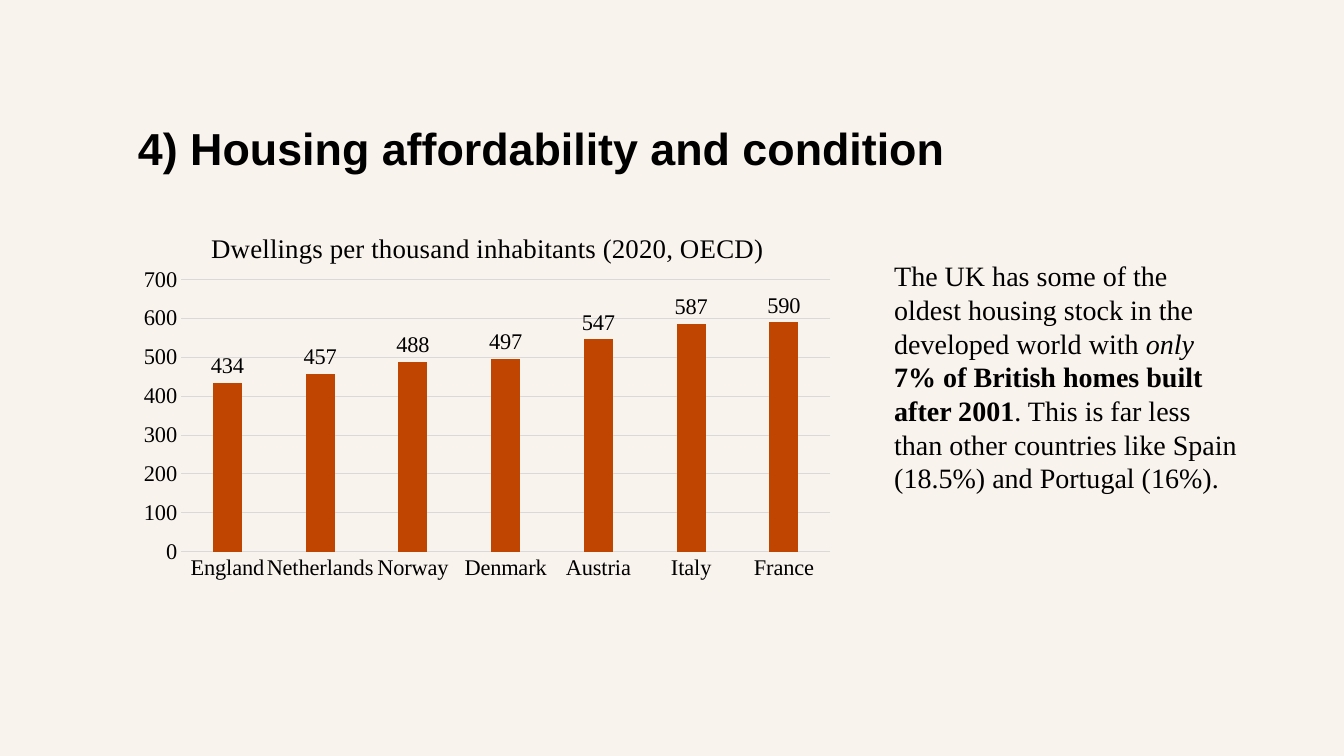
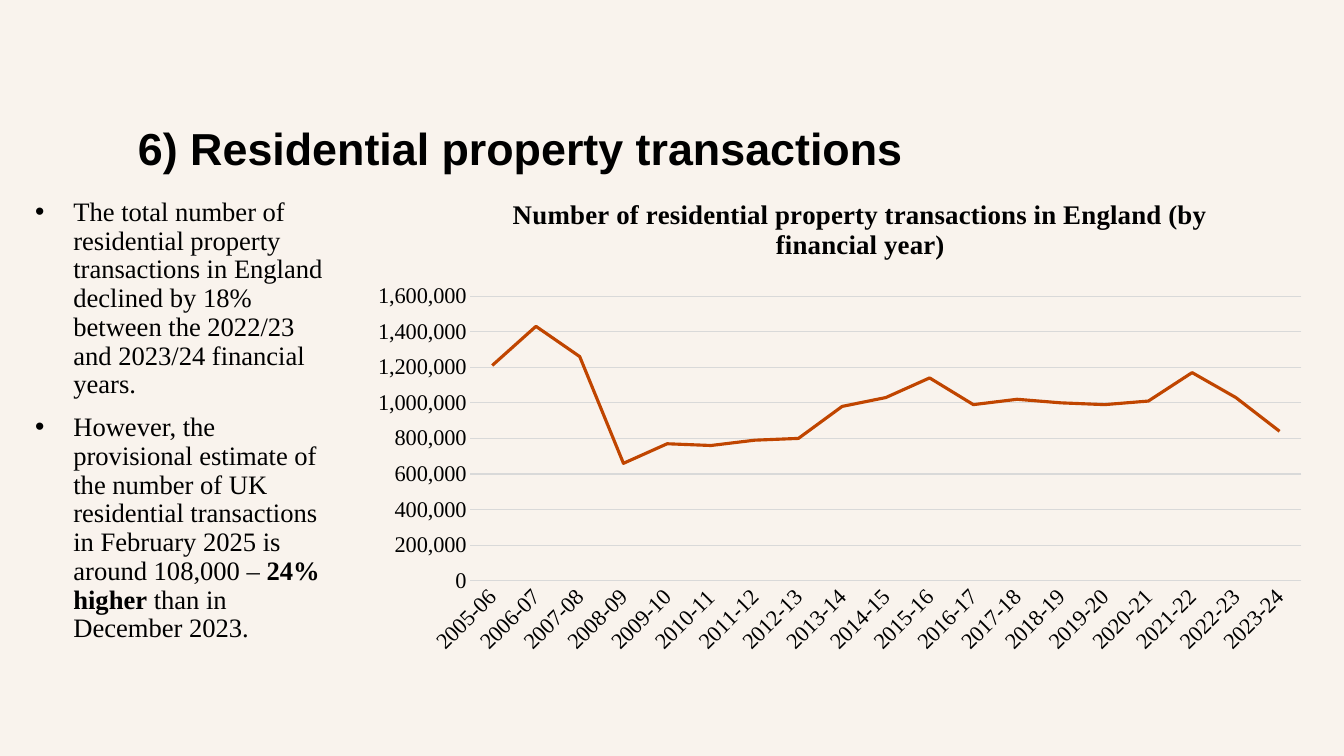
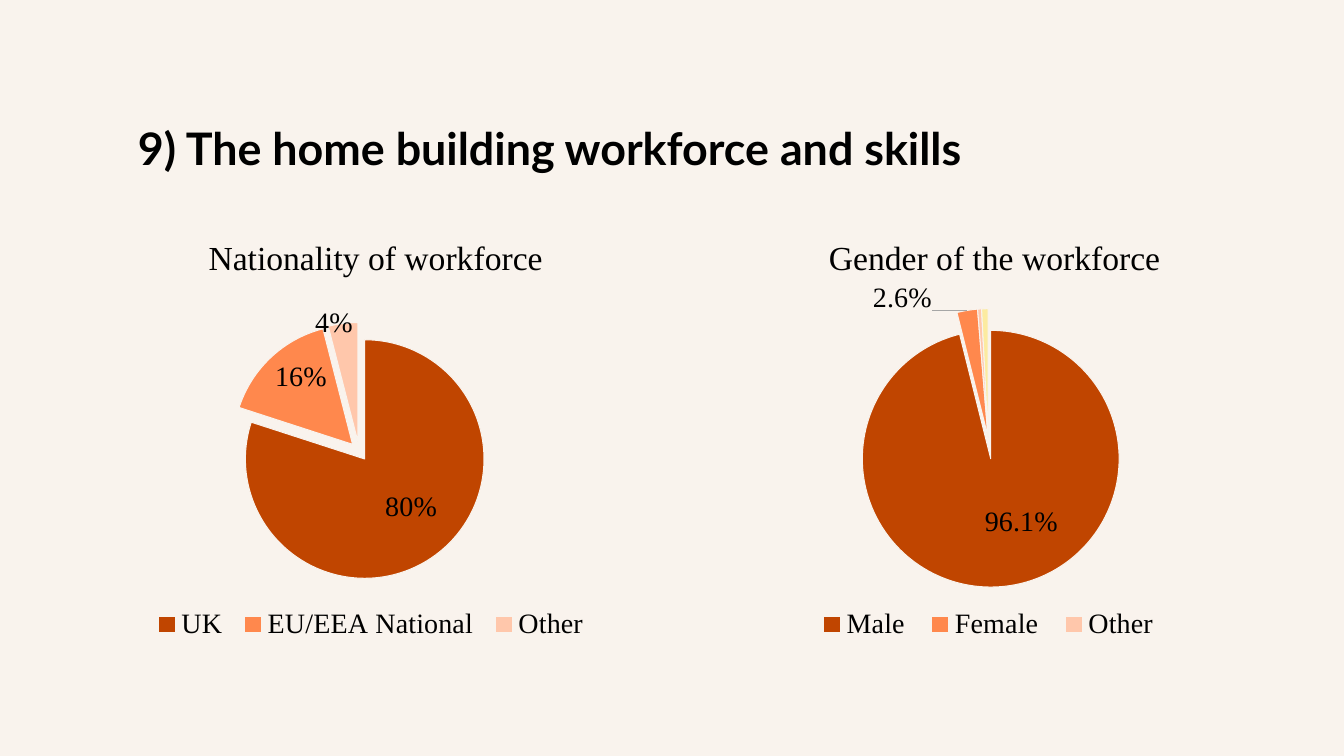
from pptx import Presentation
from pptx.chart.data import CategoryChartData
from pptx.dml.color import RGBColor
from pptx.enum.chart import XL_CHART_TYPE, XL_LABEL_POSITION, XL_LEGEND_POSITION, XL_TICK_MARK
from pptx.oxml import parse_xml
from pptx.oxml.ns import nsdecls, qn
from pptx.util import Inches, Pt

CREAM = RGBColor(0xF9, 0xF3, 0xED)
BLACK = RGBColor(0, 0, 0)
GREY = RGBColor(0xD9, 0xD9, 0xD9)
RUST = RGBColor(0xC0, 0x45, 0x00)
ORANGE = RGBColor(0xFF, 0x88, 0x4D)
PEACH = RGBColor(0xFF, 0xC7, 0xAB)
YELLOW = RGBColor(0xFC, 0xEB, 0xA0)
SLICE_COLORS = (RUST, ORANGE, PEACH, YELLOW)
SERIF = "Times New Roman"


class Deck:
    """Holds the shared style and the current slide."""

    def __init__(self):
        self.presentation = Presentation()
        self.presentation.slide_width = Inches(13.33)
        self.presentation.slide_height = Inches(7.5)
        self.slide = None

    def add_slide(self, title, font="Arial"):
        self.slide = self.presentation.slides.add_slide(self.presentation.slide_layouts[6])
        background = self.slide.background.fill
        background.solid()
        background.fore_color.rgb = CREAM
        self.add_text((1.27, 1.15, 10.79, 0.59), [[(title, {"bold": True})]], 32, font)

    def style_font(self, font, size, name=SERIF, **formats):
        for key, value in {"size": Pt(size), "name": name, **formats}.items():
            setattr(font, key, value)
        font.color.rgb = BLACK

    def add_text(self, box, paragraphs, size, font=SERIF, bullets=False):
        frame = self.slide.shapes.add_textbox(*map(Inches, box)).text_frame
        frame.word_wrap = True
        for index, runs in enumerate(paragraphs):
            paragraph = frame.add_paragraph() if index else frame.paragraphs[0]
            if bullets:
                properties = paragraph._p.get_or_add_pPr()
                properties.set("marL", str(Inches(0.38)))
                properties.set("indent", str(Inches(-0.38)))
                properties.append(parse_xml(f'<a:buFont {nsdecls("a")} typeface="Arial"/>'))
                properties.append(parse_xml(f'<a:buChar {nsdecls("a")} char="•"/>'))
                paragraph.line_spacing = 0.9
                if index:
                    paragraph.space_before = Pt(10)
            for text, formats in runs:
                run = paragraph.add_run()
                run.text = text
                self.style_font(run.font, size, font, **formats)

    def element(self, tag, value):
        return parse_xml(f'<c:{tag} {nsdecls("c")} val="{value}"/>')

    def place(self, parent, position, fractions, inner=False):
        for layout in parent.findall(qn("c:layout")):
            parent.remove(layout)
        target = '<c:layoutTarget val="inner"/>' if inner else ""
        modes = "" if parent.tag == qn("c:dLbl") else '<c:xMode val="edge"/><c:yMode val="edge"/>'
        values = "".join(f'<c:{name} val="{value}"/>' for name, value in zip("xywh", fractions))
        parent.insert(position, parse_xml(
            f'<c:layout {nsdecls("c")}><c:manualLayout>{target}{modes}{values}'
            '</c:manualLayout></c:layout>'))

    def add_chart(self, kind, box, title, title_size, title_at, plot_box, values, size, bold=False):
        data = CategoryChartData()
        data.categories = list(values)
        data.add_series("Series 1", list(values.values()))
        chart = self.slide.shapes.add_chart(kind, *map(Inches, box), data).chart
        self.style_font(chart.font, size)
        chart.has_legend = False
        chart.has_title = True
        run = chart.chart_title.text_frame.paragraphs[0].add_run()
        run.text = title
        self.style_font(run.font, title_size, bold=bold)
        self.place(chart.element.xpath("c:chart/c:title")[0], 1, title_at)
        self.place(chart.element.xpath("c:chart/c:plotArea")[0], 0, plot_box, inner=True)
        chart.plots[0].vary_by_categories = kind == XL_CHART_TYPE.PIE
        return chart

    def style_axes(self, chart, number_format="General"):
        for axis in (chart.category_axis, chart.value_axis):
            axis.major_tick_mark = axis.minor_tick_mark = XL_TICK_MARK.NONE
            self.style_font(axis.tick_labels.font, 16)
        chart.value_axis.format.line.fill.background()
        chart.value_axis.tick_labels.number_format = number_format
        chart.value_axis.tick_labels.number_format_is_linked = False
        for line in (chart.category_axis.format.line, chart.value_axis.major_gridlines.format.line):
            line.color.rgb = GREY
            line.width = Pt(0.75)

    def add_labels(self, series, size, **settings):
        labels = series.data_labels
        self.style_font(labels.font, size)
        for key, value in settings.items():
            setattr(labels, key, value)

    def add_columns(self, *arguments):
        chart = self.add_chart(XL_CHART_TYPE.COLUMN_CLUSTERED, *arguments)
        self.style_axes(chart)
        plot = chart.plots[0]
        plot.gap_width, plot.overlap = 219, -27
        series = plot.series[0]
        series.invert_if_negative = False
        series.format.fill.solid()
        series.format.fill.fore_color.rgb = RUST
        self.add_labels(series, 16, show_value=True, position=XL_LABEL_POSITION.OUTSIDE_END)

    def add_line(self, *arguments):
        chart = self.add_chart(XL_CHART_TYPE.LINE, *arguments, bold=True)
        self.style_axes(chart, "#,##0")
        series = chart.plots[0].series[0]
        series.smooth = False
        series.format.line.color.rgb = RUST
        series.format.line.width = Pt(2.25)

    def add_pie(self, *arguments, legend_at, labels, label_settings,
                explosion=0, first_explosion=0, hidden_entry=None):
        chart = self.add_chart(XL_CHART_TYPE.PIE, *arguments)
        chart.has_legend = True
        chart.legend.position = XL_LEGEND_POSITION.BOTTOM
        chart.legend.include_in_layout = False
        self.style_font(chart.legend.font, 20)
        legend = chart.element.xpath("c:chart/c:legend")[0]
        self.place(legend, 1, legend_at)
        if hidden_entry is not None:
            legend.insert(1, parse_xml(
                f'<c:legendEntry {nsdecls("c")}><c:idx val="{hidden_entry}"/>'
                '<c:delete val="1"/></c:legendEntry>'))
        series = chart.plots[0].series[0]
        self.add_labels(series, 20, **label_settings)
        for index in range(len(series.values)):
            slice_format = series.points[index].format
            slice_format.fill.solid()
            slice_format.fill.fore_color.rgb = SLICE_COLORS[index]
            slice_format.line.color.rgb = CREAM
            slice_format.line.width = Pt(0.75)
        first_slice = chart.element.xpath(".//c:dPt")[0]
        if explosion:
            first_slice.addprevious(self.element("explosion", explosion))
        if first_explosion:
            first_slice.find(qn("c:spPr")).addprevious(self.element("explosion", first_explosion))
        for index, label in labels.items():
            self.style_label(chart, series, index, label, label_settings)
        for leader_switch in chart.element.xpath(".//c:ser/c:dLbls/c:showLeaderLines"):
            leader_switch.addnext(parse_xml(
                f'<c:leaderLines {nsdecls("c", "a")}><c:spPr><a:ln w="9525"><a:solidFill>'
                '<a:srgbClr val="A6A6A6"/></a:solidFill></a:ln></c:spPr></c:leaderLines>'))

    def style_label(self, chart, series, index, label, settings):
        data_label = series.points[index].data_label
        self.style_font(data_label.font, 20)
        if label:
            data_label.position = label[0]
        element = chart.element.xpath(f".//c:dLbl[c:idx/@val='{index}']")[0]
        if label:
            self.place(element, 1, label[1])
            for tag, key in (("showVal", "show_value"), ("showPercent", "show_percentage")):
                element.find(qn(f"c:{tag}")).set("val", str(int(settings[key])))
        else:
            for child in list(element)[1:]:
                element.remove(child)
            element.append(self.element("delete", 1))


def main():
    deck = Deck()
    deck.add_slide("4) Housing affordability and condition")
    deck.add_columns(
        (1.26, 2.12, 7.14, 4.23), "Dwellings per thousand inhabitants (2020, OECD)", 19.2,
        (0.11, 0.03), (0.075, 0.155, 0.902, 0.638),
        {"England": 434, "Netherlands": 457, "Norway": 488, "Denmark": 497,
         "Austria": 547, "Italy": 587, "France": 590}, 16)
    deck.add_text((8.77, 2.52, 3.62, 2.46), [[
        ("The UK has some of the oldest housing stock in the developed world with ", {}),
        ("only ", {"italic": True}),
        ("7% of British homes built after 2001", {"bold": True}),
        (". This is far less than other countries like Spain (18.5%) and Portugal (16%).", {})]], 20)

    deck.add_slide("6) Residential property transactions")
    deck.add_text((0.25, 1.92, 3.13, 4.78), [
        [("The total number of residential property transactions in England declined by 18% "
          "between the 2022/23 and 2023/24 financial years.", {})],
        [("However, the provisional estimate of the number of UK residential transactions in "
          "February 2025 is around 108,000 – ", {}),
         ("24% higher", {"bold": True}), (" than in December 2023.", {})]], 19, bullets=True)
    thousands = (1210, 1430, 1260, 660, 770, 760, 790, 800, 980, 1030,
                 1140, 990, 1020, 1000, 990, 1010, 1170, 1030, 840)
    deck.add_line(
        (3.56, 1.81, 9.53, 4.78),
        "Number of residential property transactions in England (by financial year)", 19.2,
        (0.155, 0.02), (0.116, 0.236, 0.865, 0.591),
        {f"{year}-{(year + 1) % 100:02}": count * 1000
         for year, count in enumerate(thousands, 2005)}, 16)

    deck.add_slide("9) The home building workforce and skills", "Lato")
    deck.add_pie(
        (6.86, 2.28, 5.66, 4.4), "Gender of the workforce", 24,
        (0.23, 0), (0.28, 0.178, 0.479, 0.579),
        {"Male": 0.961, "Female": 0.026, "Other": 0.005, "Prefer not to say": 0.008}, 20,
        legend_at=(0.2, 0.84, 0.64, 0.1), first_explosion=17, hidden_entry=3,
        labels={0: (XL_LABEL_POSITION.CENTER, (0.04, 0)),
                1: (XL_LABEL_POSITION.OUTSIDE_END, (-0.06, 0.02)), 2: None, 3: None},
        label_settings={"show_value": True, "show_percentage": False,
                        "number_format": "0.0%", "number_format_is_linked": False})
    deck.add_pie(
        (0.82, 2.28, 5.66, 4.4), "Nationality of workforce", 24,
        (0.21, 0), (0.244, 0.209, 0.481, 0.581),
        {"UK": 80, "EU/EEA National": 16, "Other": 4}, 20,
        legend_at=(0.11, 0.84, 0.79, 0.1), explosion=8,
        labels={0: (XL_LABEL_POSITION.CENTER, (0.02, 0)),
                2: (XL_LABEL_POSITION.INSIDE_END, (-0.05, -0.05))},
        label_settings={"show_value": False, "show_percentage": True, "number_format": "0%",
                        "number_format_is_linked": False,
                        "position": XL_LABEL_POSITION.INSIDE_END})
    deck.presentation.save("out.pptx")


if __name__ == "__main__":
    main()
